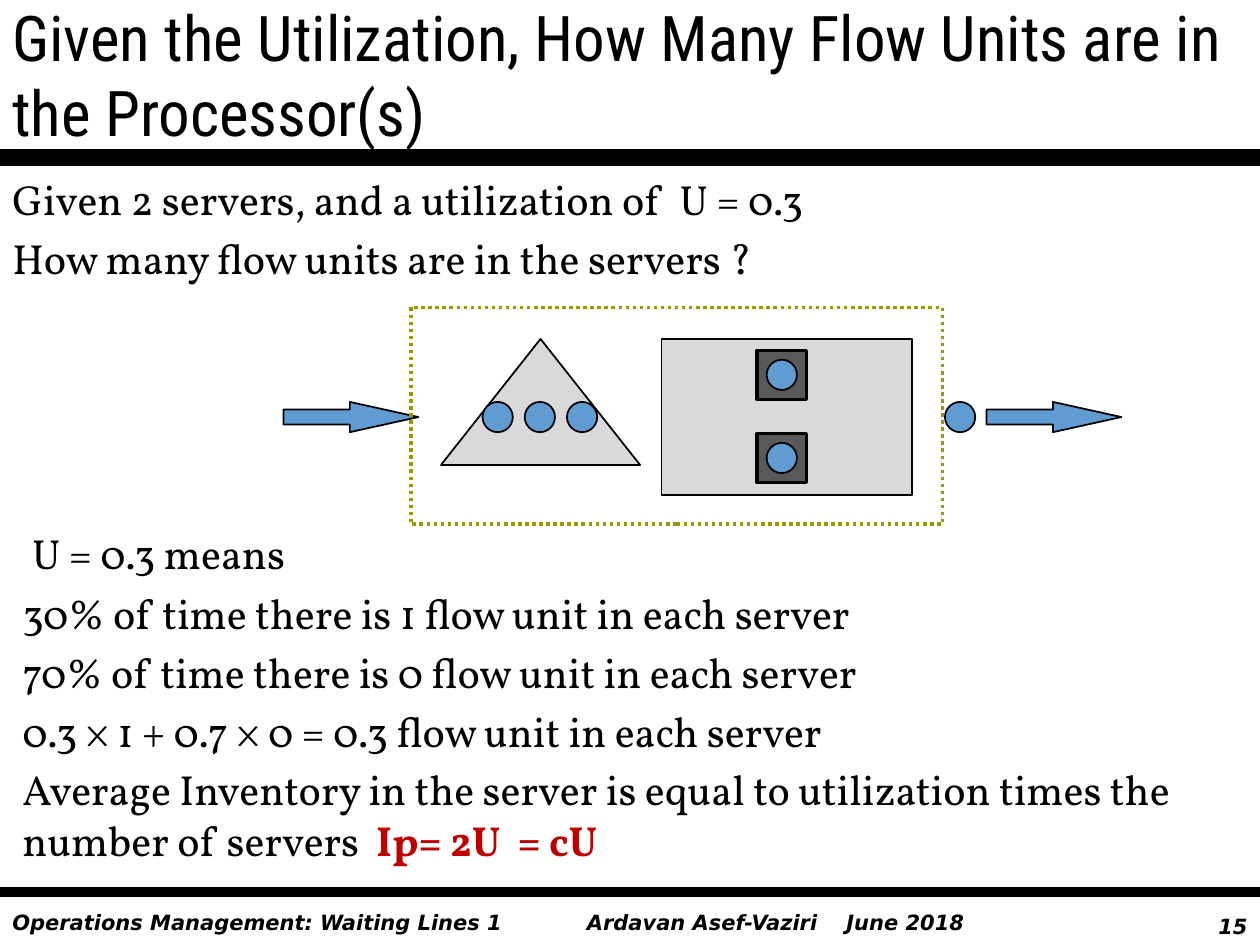
from dataclasses import dataclass
from typing import Optional

from lxml import etree
from pptx import Presentation
from pptx.dml.color import RGBColor
from pptx.enum import dml, shapes, text
from pptx.oxml import ns
from pptx import util as u

COLUMN = u.Inches(10) // 100
ROW = u.Inches(7.5) // 75
BLACK = "000000"
BLUE = "609CD2"
GREY = "D9D9D9"
DARK = "595959"
RED = "C00000"
OLIVE = "999900"
BODY = "Vollkorn"
HEADING = "Roboto Condensed"
FOOTER = "DejaVu Sans"
FLOW_ROW = 31.9
UNIT = 2.4
SERVER = 3.9
SERVER_COLUMN = 60.1
SERVER_ROWS = (27.8, 34.4)
QUEUE_COLUMNS = [38.3 + 3.35 * place for place in range(3)]
KIND = shapes.MSO_SHAPE


@dataclass
class Area:
    column: float
    row: float
    columns: float
    rows: float

    def lengths(self) -> tuple[int, int, int, int]:
        return (
            round(self.column * COLUMN),
            round(self.row * ROW),
            round(self.columns * COLUMN),
            round(self.rows * ROW),
        )


@dataclass
class Span:
    words: str
    size: Optional[float] = None
    color: Optional[str] = None
    bold: Optional[bool] = None


@dataclass
class Style:
    font: str
    size: float
    strong: bool = False
    before: float = 0
    align: text.PP_ALIGN = text.PP_ALIGN.LEFT
    anchor: text.MSO_ANCHOR = text.MSO_ANCHOR.TOP


@dataclass
class Figure:
    kind: shapes.MSO_SHAPE
    area: Area
    fill: Optional[str] = BLUE
    line: str = BLACK
    weight: float = 1


def paint(color: str) -> RGBColor:
    return RGBColor.from_string(color)


def write(page, area: Area, style: Style, paragraphs: list[list[Span]]) -> None:
    box = page.shapes.add_textbox(*area.lengths())
    frame = box.text_frame
    frame.word_wrap = True
    frame.vertical_anchor = style.anchor
    for index, spans in enumerate(paragraphs):
        para = frame.add_paragraph() if index else frame.paragraphs[0]
        para.alignment = style.align
        para.space_before = u.Pt(style.before)
        para.font.name = style.font
        para.font.size = u.Pt(style.size)
        para.font.bold = para.font.italic = style.strong
        para.font.color.rgb = paint(BLACK)
        for span in spans:
            run = para.add_run()
            run.text = span.words
            if span.size:
                run.font.size = u.Pt(span.size)
            if span.color:
                run.font.color.rgb = paint(span.color)
            if span.bold:
                run.font.bold = True


def finish(shape, fill: Optional[str], line: str, weight: float) -> None:
    shape.shadow.inherit = False
    if fill:
        shape.fill.solid()
        shape.fill.fore_color.rgb = paint(fill)
    else:
        shape.fill.background()
    shape.line.color.rgb = paint(line)
    shape.line.width = u.Pt(weight)


def draw(page, figure: Figure):
    shape = page.shapes.add_shape(figure.kind, *figure.area.lengths())
    finish(shape, figure.fill, figure.line, figure.weight)
    return shape


def draw_arrow(page, column: float) -> None:
    arrow = draw(page, Figure(KIND.RIGHT_ARROW, Area(column, FLOW_ROW, 10.7, UNIT)))
    arrow.adjustments[1] = 2.26


def draw_queue(page) -> None:
    builder = page.shapes.build_freeform(350, 369, scale=(COLUMN / 10, ROW / 10))
    builder.add_line_segments([(429, 269), (508, 369)], close=True)
    finish(builder.convert_to_shape(), GREY, BLACK, 1)


def draw_rule(page, row: float, weight: float) -> None:
    height = round(row * ROW)
    rule = page.shapes.add_connector(
        shapes.MSO_CONNECTOR.STRAIGHT, 0, height, 100 * COLUMN, height
    )
    rule.line.color.rgb = paint(BLACK)
    rule.line.width = u.Pt(weight)
    etree.SubElement(rule._element.spPr, ns.qn("a:effectLst"))


def draw_process(page) -> None:
    draw_queue(page)
    draw(page, Figure(KIND.RECTANGLE, Area(52.5, 26.9, 19.9, 12.4), GREY))
    for row in SERVER_ROWS:
        server = Area(SERVER_COLUMN, row, SERVER, SERVER)
        draw(page, Figure(KIND.RECTANGLE, server, DARK, weight=2))
    margin = (SERVER - UNIT) / 2
    places = [(column, FLOW_ROW) for column in [*QUEUE_COLUMNS, 75]]
    places += [(SERVER_COLUMN + margin, row + margin) for row in SERVER_ROWS]
    for column, row in places:
        draw(page, Figure(KIND.OVAL, Area(column, row, UNIT, UNIT)))
    for column in (22.5, 78.3):
        draw_arrow(page, column)
    border = Figure(KIND.RECTANGLE, Area(32.6, 24.4, 42.2, 17.2), None, OLIVE, 2)
    draw(page, border).line.dash_style = dml.MSO_LINE.ROUND_DOT


def main() -> None:
    deck = Presentation()
    deck.slide_width = 100 * COLUMN
    deck.slide_height = 75 * ROW
    page = deck.slides.add_slide(deck.slide_layouts[6])

    footer = Style(FOOTER, 12, strong=True)
    number = Style(FOOTER, 12, strong=True, align=text.PP_ALIGN.RIGHT)
    heading = Style(HEADING, 36, anchor=text.MSO_ANCHOR.MIDDLE)
    body = Style(BODY, 24, before=4.8)

    write(page, Area(92.5, 72, 7.5, 3), number, [[Span("15")]])
    write(page, Area(45.6, 71.7, 33.5, 3), footer,
          [[Span("Ardavan Asef-Vaziri    June 2018")]])
    write(page, Area(0, 71.7, 46.7, 3), footer,
          [[Span("Operations Management: Waiting Lines 1")]])
    draw_rule(page, 12.5, 10)
    draw_rule(page, 70.8, 6)
    write(page, Area(0, 0, 100, 11.7), heading,
          [[Span("Given the Utilization, How Many Flow Units are in the Processor(s)")]])
    write(page, Area(0, 13.3, 97.5, 11.2), body, [
        [Span("Given 2 servers, and a utilization of  U = 0.3")],
        [Span("How many flow units are in the servers ?")],
    ])
    draw_process(page)
    write(page, Area(0.8, 40.8, 97.5, 30), body, [
        [Span(" ", size=28), Span("U = 0.3 means")],
        [Span("30% of time there is 1 flow unit in each server")],
        [Span("70% of time there is 0 flow unit in each server")],
        [Span("0.3 × 1 + 0.7 × 0 = 0.3 flow unit in each server")],
        [
            Span("Average Inventory in the server is equal to utilization "
                 "times the number of servers  "),
            Span("Ip= 2U  = cU", color=RED, bold=True),
        ],
    ])
    deck.save("out.pptx")


if __name__ == "__main__":
    main()
